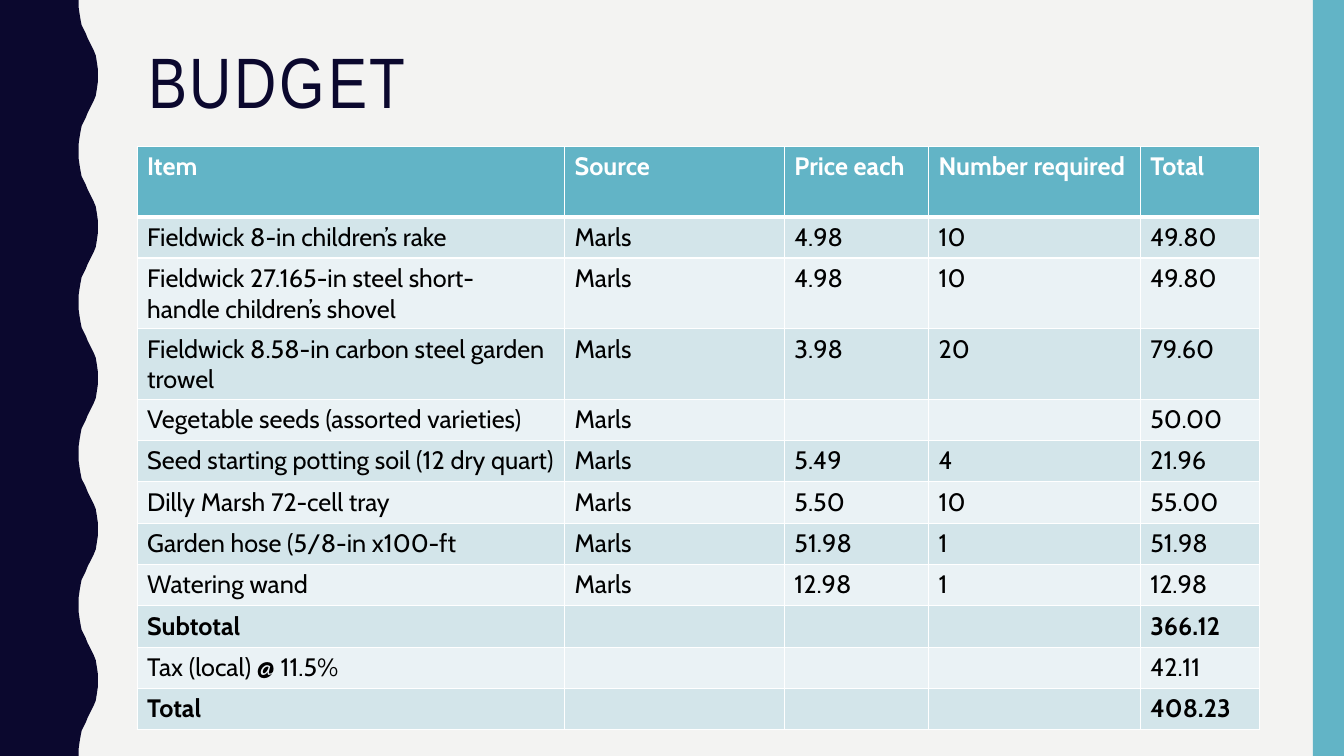
from dataclasses import dataclass

from lxml import etree
from pptx import Presentation, slide as s, table as t, util as u
from pptx.dml.color import RGBColor
from pptx.enum import shapes, text
from pptx.oxml.ns import qn

PX = 9144  # EMU; 100 px to the inch
WIDTH, HEIGHT = 1333, 750

NAVY = RGBColor(0x0B, 0x08, 0x2E)
TEAL = RGBColor(0x62, 0xB4, 0xC6)
PAPER = RGBColor(0xF3, 0xF3, 0xF2)
WHITE = RGBColor(0xFF, 0xFF, 0xFF)
BLACK = RGBColor(0x00, 0x00, 0x00)
BANDS = (RGBColor(0xD3, 0xE5, 0xEA), RGBColor(0xEA, 0xF2, 0xF5))

WAVE_PERIOD = 150
WAVE_RISE = ((78, 0), (78, 7), (79, 14), (80, 20), (81, 25), (83, 29), (85, 33),
             (87, 38), (89, 42), (91, 46), (93, 50), (95, 55), (96, 61), (97, 68),
             (97, 75))

COLUMNS = (424, 218, 143, 210, 118)
HEADINGS = ("Item", "Source", "Price each", "Number required", "Total")


@dataclass(frozen=True)
class BudgetLine:
    item: str
    source: str = ""
    price: str = ""
    number: str = ""
    total: str = ""
    height: int = 41
    bold: bool = False

    def values(self) -> tuple[str, ...]:
        return self.item, self.source, self.price, self.number, self.total


STORE = "Marls"
BUDGET = (
    BudgetLine("Fieldwick 8-in children’s rake", STORE, "4.98", "10", "49.80"),
    BudgetLine("Fieldwick 27.165-in steel short-\nhandle children’s shovel",
               STORE, "4.98", "10", "49.80", height=70),
    BudgetLine("Fieldwick 8.58-in carbon steel garden trowel",
               STORE, "3.98", "20", "79.60", height=70),
    BudgetLine("Vegetable seeds (assorted varieties)", STORE, total="50.00"),
    BudgetLine("Seed starting potting soil (12 dry quart)", STORE, "5.49", "4", "21.96"),
    BudgetLine("Dilly Marsh 72-cell tray", STORE, "5.50", "10", "55.00"),
    BudgetLine("Garden hose (5/8-in x100-ft", STORE, "51.98", "1", "51.98"),
    BudgetLine("Watering wand", STORE, "12.98", "1", "12.98"),
    BudgetLine("Subtotal", total="366.12", bold=True),
    BudgetLine("Tax (local) @ 11.5%", total="42.11"),
    BudgetLine("Total", total="408.23", bold=True),
)


def px(length: int) -> u.Emu:
    return u.Emu(length * PX)


def draw_wave(page: s.Slide) -> None:
    """Draw the left band, whose right edge repeats a mirrored half wave."""
    fall = [(x, WAVE_PERIOD - y) for x, y in reversed(WAVE_RISE[:-1])]
    edge = [(x, start + y) for start in range(0, HEIGHT, WAVE_PERIOD)
            for x, y in [*WAVE_RISE, *fall[:-1]]]
    builder = page.shapes.build_freeform(0, 0, scale=PX)
    builder.add_line_segments([*edge, (WAVE_RISE[0][0], HEIGHT), (0, HEIGHT)], close=True)
    paint(builder.convert_to_shape(), NAVY)


def draw_right_bar(page: s.Slide) -> None:
    bar = page.shapes.add_shape(shapes.MSO_SHAPE.RECTANGLE,
                                px(1302), 0, px(WIDTH - 1302), px(HEIGHT))
    paint(bar, TEAL)


def paint(shape, color: RGBColor) -> None:
    shape.shadow.inherit = False
    shape.fill.solid()
    shape.fill.fore_color.rgb = color
    shape.line.fill.background()


def add_span(para, words: str, font: str, size: int, color: RGBColor, bold: bool = False):
    span = para.add_run()
    span.text = words
    span.font.name = font
    span.font.size = u.Pt(size)
    span.font.color.rgb = color
    span.font.bold = bold
    return span


def draw_title(page: s.Slide) -> None:
    box = page.shapes.add_textbox(px(137), px(42), px(1113), px(163))
    frame = box.text_frame
    frame.word_wrap = True
    frame.vertical_anchor = text.MSO_ANCHOR.TOP
    para = frame.paragraphs[0]
    para.line_spacing = 0.9
    span = add_span(para, "BUDGET", "Arial Narrow", 51, NAVY)
    span._r.get_or_add_rPr().set("spc", "200")


def add_borders(cell: t._Cell, top: int, bottom: int) -> None:
    """Add white borders; must run before the cell is filled, as XML order matters."""
    properties = cell._tc.get_or_add_tcPr()
    for side, points in (("L", 1), ("R", 1), ("T", top), ("B", bottom)):
        line = etree.SubElement(properties, qn(f"a:ln{side}"), w=str(u.Pt(points)))
        fill = etree.SubElement(line, qn("a:solidFill"))
        etree.SubElement(fill, qn("a:srgbClr"), val=str(WHITE))


def fill_row(table: t.Table, index: int, line: BudgetLine) -> None:
    is_header = index == 0
    table.rows[index].height = px(line.height)
    for column, words in enumerate(line.values()):
        cell = table.cell(index, column)
        add_borders(cell, top=3 if index == 1 else 1, bottom=3 if is_header else 1)
        cell.fill.solid()
        cell.fill.fore_color.rgb = TEAL if is_header else BANDS[(index - 1) % 2]
        para = cell.text_frame.paragraphs[0]
        for number, part in enumerate(words.splitlines()):
            if number:
                para.add_line_break()
            add_span(para, part, "Cabin", 18, WHITE if is_header else BLACK, line.bold)


def draw_budget(page: s.Slide) -> None:
    lines = (BudgetLine(*HEADINGS, height=70, bold=True), *BUDGET)
    frame = page.shapes.add_table(len(lines), len(COLUMNS), px(136), px(145),
                                  px(sum(COLUMNS)), px(sum(line.height for line in lines)))
    table = frame.table
    table.first_row = table.horz_banding = False
    for column, width in zip(table.columns, COLUMNS):
        column.width = px(width)
    for index, line in enumerate(lines):
        fill_row(table, index, line)


def main() -> None:
    deck = Presentation()
    deck.slide_width, deck.slide_height = px(WIDTH), px(HEIGHT)
    page = deck.slides.add_slide(deck.slide_layouts[6])
    page.background.fill.solid()
    page.background.fill.fore_color.rgb = PAPER
    draw_wave(page)
    draw_right_bar(page)
    draw_title(page)
    draw_budget(page)
    deck.save("out.pptx")


if __name__ == "__main__":
    main()
